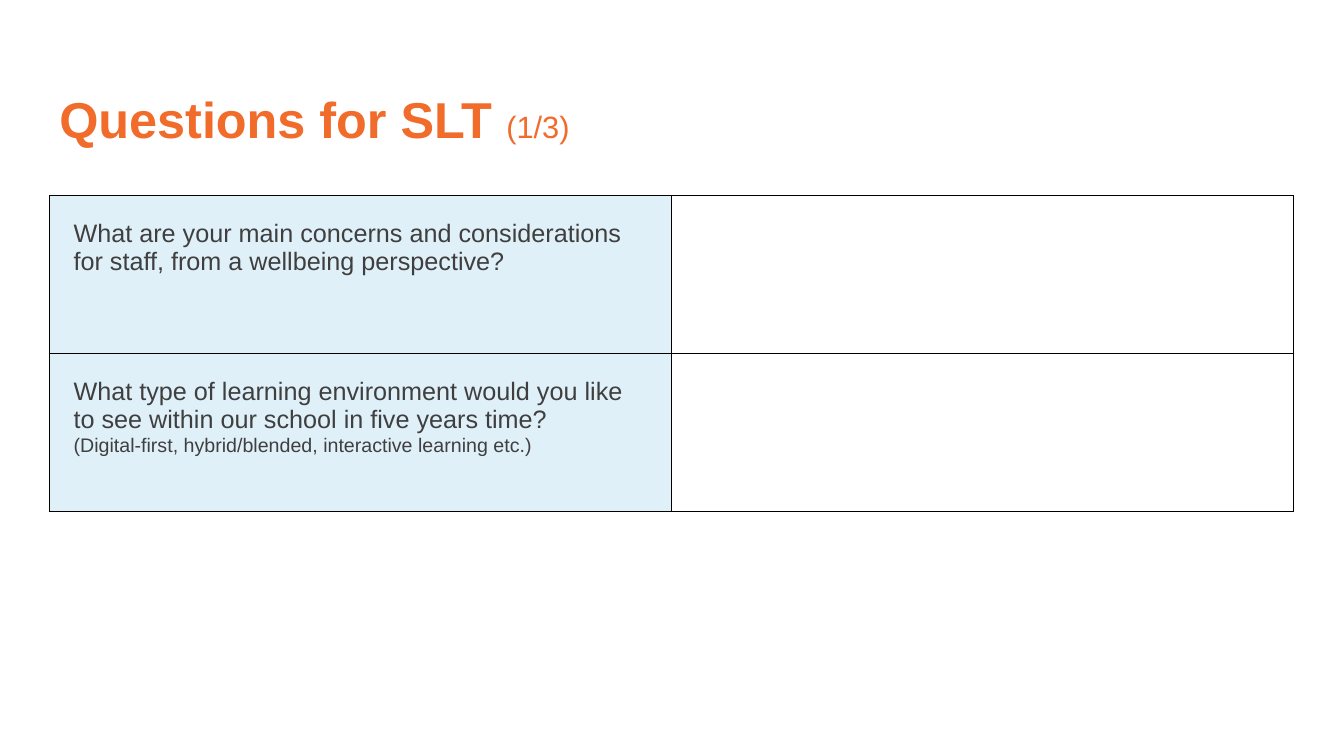
from dataclasses import dataclass

from lxml.etree import SubElement
from pptx import Presentation
from pptx.dml.color import RGBColor
from pptx.enum.text import MSO_ANCHOR
from pptx.oxml.ns import qn
from pptx.slide import Slide
from pptx.table import _Cell
from pptx.util import Pt


@dataclass(frozen=True)
class Theme:
    font: str = "Arial"
    orange: RGBColor = RGBColor(0xF1, 0x6B, 0x2B)
    text: RGBColor = RGBColor(0x3F, 0x3F, 0x3F)
    pale_blue: RGBColor = RGBColor(0xE0, 0xF0, 0xF9)
    white: RGBColor = RGBColor(0xFF, 0xFF, 0xFF)
    border: str = "000000"
    border_width: Pt = Pt(0.75)
    title_size: Pt = Pt(36)
    page_size: Pt = Pt(22)
    question_size: Pt = Pt(18)
    hint_size: Pt = Pt(14)


@dataclass(frozen=True)
class Question:
    text: str
    hint: str = ""


THEME = Theme()
LEFT = Pt(35.3)
TABLE_TOP = Pt(139.7)
COLUMN_WIDTH = Pt(444.4)
ROW_HEIGHT = Pt(113)
CELL_MARGIN = Pt(17.28)

QUESTIONS = [
    Question("What are your main concerns and considerations for staff, "
             "from a wellbeing perspective?"),
    Question("What type of learning environment would you like to see "
             "within our school in five years time?",
             "(Digital-first, hybrid/blended, interactive learning etc.)"),
]


def add_title(s: Slide, title: str, page: str) -> None:
    tf = s.shapes.add_textbox(LEFT, Pt(35.3), Pt(828), Pt(104.4)).text_frame
    tf.word_wrap = True
    tf.vertical_anchor = MSO_ANCHOR.MIDDLE
    p = tf.paragraphs[0]
    p.line_spacing = 0.9
    p.font.name = THEME.font
    p.font.color.rgb = THEME.orange
    for text, size, bold in ((f"{title} ", THEME.title_size, True),
                             (page, THEME.page_size, False)):
        r = p.add_run()
        r.text = text
        r.font.size = size
        r.font.bold = bold


def style_cell(cell: _Cell, fill: RGBColor) -> None:
    """Draw the four borders, then the fill, in the order the schema needs."""
    tc_pr = cell._tc.get_or_add_tcPr()
    for side in ("lnL", "lnR", "lnT", "lnB"):
        ln = SubElement(tc_pr, qn(f"a:{side}"), w=str(THEME.border_width))
        solid = SubElement(ln, qn("a:solidFill"))
        SubElement(solid, qn("a:srgbClr"), val=THEME.border)
    cell.fill.solid()
    cell.fill.fore_color.rgb = fill


def write_question(cell: _Cell, question: Question) -> None:
    cell.margin_left = cell.margin_right = CELL_MARGIN
    cell.margin_top = cell.margin_bottom = CELL_MARGIN
    p = cell.text_frame.paragraphs[0]
    p.font.name = THEME.font
    p.font.size = THEME.question_size
    p.font.color.rgb = THEME.text
    p.add_run().text = question.text
    if question.hint:
        p.add_line_break()
        r = p.add_run()
        r.text = question.hint
        r.font.size = THEME.hint_size


def add_question_table(s: Slide, questions: list[Question]) -> None:
    table = s.shapes.add_table(len(questions), 2, LEFT, TABLE_TOP,
                               2 * COLUMN_WIDTH,
                               len(questions) * ROW_HEIGHT).table
    table.first_row = table.horz_banding = False
    for row, question in zip(table.rows, questions):
        question_cell, answer_cell = row.cells
        style_cell(question_cell, THEME.pale_blue)
        style_cell(answer_cell, THEME.white)
        write_question(question_cell, question)


def main() -> None:
    prs = Presentation()
    prs.slide_width, prs.slide_height = Pt(960), Pt(540)
    s = prs.slides.add_slide(prs.slide_layouts[6])
    add_title(s, "Questions for SLT", "(1/3)")
    add_question_table(s, QUESTIONS)
    prs.save("out.pptx")


if __name__ == "__main__":
    main()
